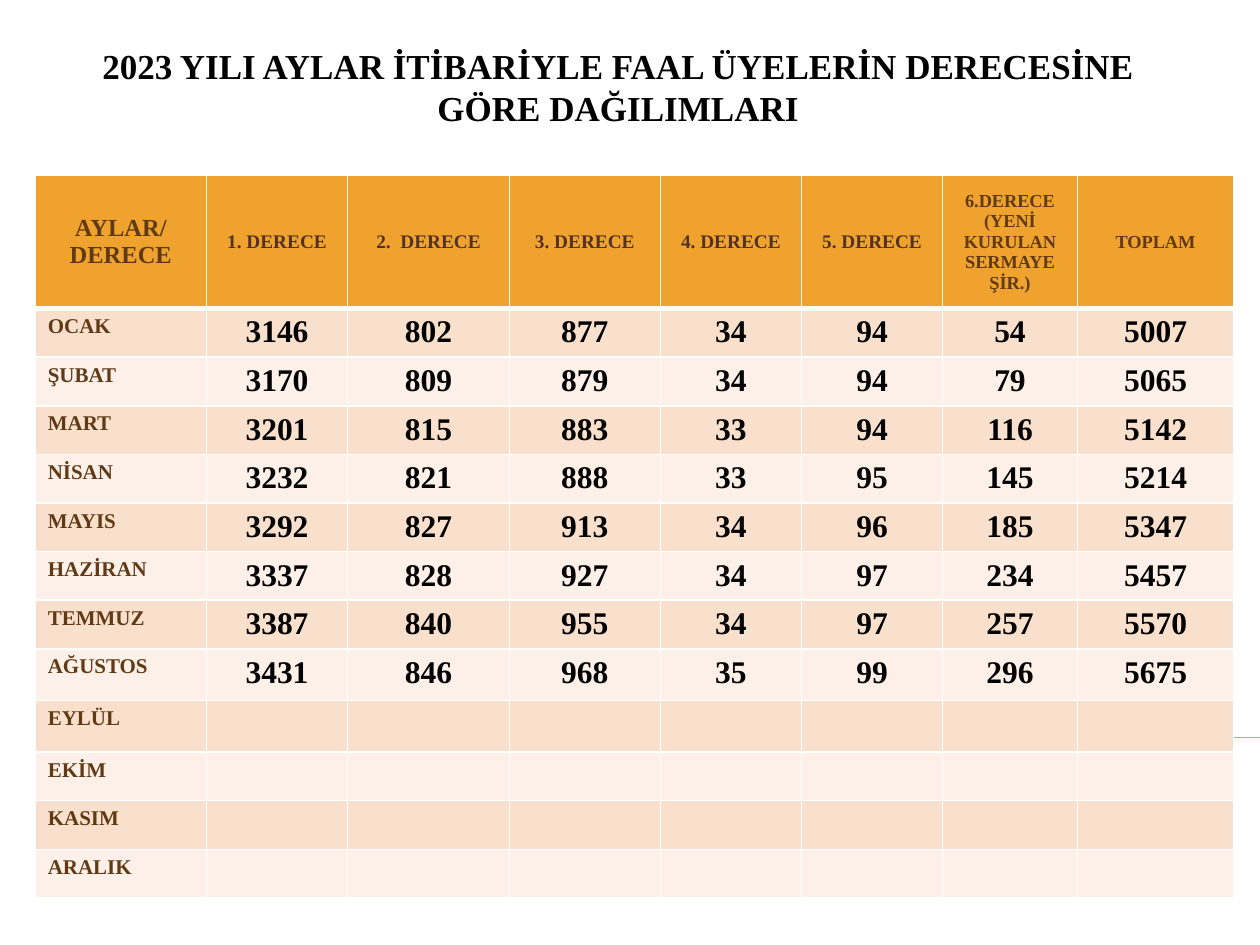
from dataclasses import dataclass

from lxml import etree
from pptx import Presentation
from pptx.dml.color import RGBColor
from pptx.enum import shapes, text
from pptx.oxml import ns
from pptx.util import Cm, Pt


@dataclass(frozen=True)
class Theme:
    font: str = "Times New Roman"
    ink: str = "000000"
    brown: str = "603A14"
    dark: str = "523227"
    gold: str = "F0A22E"
    white: str = "FFFFFF"
    bands: tuple = ("F9E0CD", "FCF0E8")
    title: float = 20
    corner: float = 14
    grade: float = 11
    small: float = 10.5
    month: float = 12
    count: float = 18


THEME = Theme()
TITLE = "2023 YILI AYLAR İTİBARİYLE FAAL ÜYELERİN DERECESİNE GÖRE DAĞILIMLARI"

# Header cells: wording, size, colour
HEADS = [
    ("AYLAR/ DERECE", THEME.corner, THEME.brown),
    ("1. DERECE", THEME.grade, THEME.dark),
    ("2.  DERECE", THEME.grade, THEME.dark),
    ("3. DERECE", THEME.grade, THEME.dark),
    ("4. DERECE", THEME.grade, THEME.dark),
    ("5. DERECE", THEME.grade, THEME.dark),
    ("6.DERECE (YENİ KURULAN SERMAYE ŞİR.)", THEME.small, THEME.brown),
    ("TOPLAM", THEME.small, THEME.brown),
]

# Members per grade; the total is their sum
MONTHS = {
    "OCAK": [3146, 802, 877, 34, 94, 54],
    "ŞUBAT": [3170, 809, 879, 34, 94, 79],
    "MART": [3201, 815, 883, 33, 94, 116],
    "NİSAN": [3232, 821, 888, 33, 95, 145],
    "MAYIS": [3292, 827, 913, 34, 96, 185],
    "HAZİRAN": [3337, 828, 927, 34, 97, 234],
    "TEMMUZ": [3387, 840, 955, 34, 97, 257],
    "AĞUSTOS": [3431, 846, 968, 35, 99, 296],
    "EYLÜL": [],
    "EKİM": [],
    "KASIM": [],
    "ARALIK": [],
}
WIDTHS = [3.45, 2.85, 3.26, 3.04, 2.85, 2.84, 2.72, 3.15]
HEAD_H, ROW_H, TALL_H = 2.68, 0.98, 1.04
TALL = ("AĞUSTOS", "EYLÜL")


def write(frame, words, size, color, align):
    """Put one bold paragraph into a text frame."""
    frame.text = words
    para = frame.paragraphs[0]
    para.alignment = align
    for run in para.runs:
        run.font.name = THEME.font
        run.font.size = Pt(size)
        run.font.bold = True
        run.font.color.rgb = RGBColor.from_string(color)


def edge(cell, base):
    """Draw white cell borders, with the given width below."""
    props = cell._tc.get_or_add_tcPr()
    sides = {"lnL": 1, "lnR": 1, "lnT": 1, "lnB": base}
    for spot, (side, width) in enumerate(sides.items()):
        line = etree.Element(ns.qn("a:" + side), w=str(Pt(width)))
        fill = etree.SubElement(line, ns.qn("a:solidFill"))
        etree.SubElement(fill, ns.qn("a:srgbClr"), val=THEME.white)
        props.insert(spot, line)


def paint(cell, color, base=1):
    cell.fill.solid()
    cell.fill.fore_color.rgb = RGBColor.from_string(color)
    edge(cell, base)


def add_title(slide):
    title = slide.shapes.title
    title.left, title.top = Cm(0.71), Cm(0.76)
    title.width, title.height = Cm(23.5), Cm(1.6)
    frame = title.text_frame
    write(frame, TITLE, THEME.title, THEME.ink, text.PP_ALIGN.CENTER)
    frame.word_wrap = True
    frame.auto_size = text.MSO_AUTO_SIZE.NONE
    frame.vertical_anchor = text.MSO_ANCHOR.TOP
    frame.margin_left = frame.margin_right = Cm(0.4)


def add_rule(slide):
    rule = slide.shapes.add_connector(
        shapes.MSO_CONNECTOR.STRAIGHT, Cm(1.42), Cm(14.86), Cm(25.4), Cm(14.86))
    rule.line.color.rgb = RGBColor.from_string(THEME.gold)
    rule.line.width = Pt(0.75)
    etree.SubElement(rule._element.spPr, ns.qn("a:effectLst"))


def fill_head(table):
    for col, (words, size, color) in enumerate(HEADS):
        cell = table.cell(0, col)
        write(cell.text_frame, words, size, color, text.PP_ALIGN.CENTER)
        cell.vertical_anchor = text.MSO_ANCHOR.MIDDLE
        paint(cell, THEME.gold, 3)


def fill_month(table, row, month, counts):
    totals = counts + [sum(counts)] if counts else []
    for col in range(len(WIDTHS)):
        cell = table.cell(row, col)
        cell.margin_bottom = 0
        paint(cell, THEME.bands[(row - 1) % 2])
        if col == 0:
            write(cell.text_frame, month, THEME.month, THEME.brown,
                  text.PP_ALIGN.LEFT)
        elif totals:
            write(cell.text_frame, str(totals[col - 1]), THEME.count,
                  THEME.ink, text.PP_ALIGN.CENTER)


def add_grid(slide):
    heights = [HEAD_H] + [TALL_H if m in TALL else ROW_H for m in MONTHS]
    table = slide.shapes.add_table(
        len(heights), len(WIDTHS), Cm(0.71), Cm(3.54),
        Cm(sum(WIDTHS)), Cm(sum(heights))).table
    for column, width in zip(table.columns, WIDTHS):
        column.width = Cm(width)
    for row, height in zip(table.rows, heights):
        row.height = Cm(height)
    fill_head(table)
    for row, (month, counts) in enumerate(MONTHS.items(), 1):
        fill_month(table, row, month, counts)


def main():
    deck = Presentation()
    deck.slide_width, deck.slide_height = Cm(25.4), Cm(19.05)
    slide = deck.slides.add_slide(deck.slide_layouts[0])
    # The subtitle placeholder is not needed
    sub = slide.placeholders[1]._element
    sub.getparent().remove(sub)
    # Rule first, so that the table covers it
    add_rule(slide)
    add_title(slide)
    add_grid(slide)
    deck.save("out.pptx")


if __name__ == "__main__":
    main()
